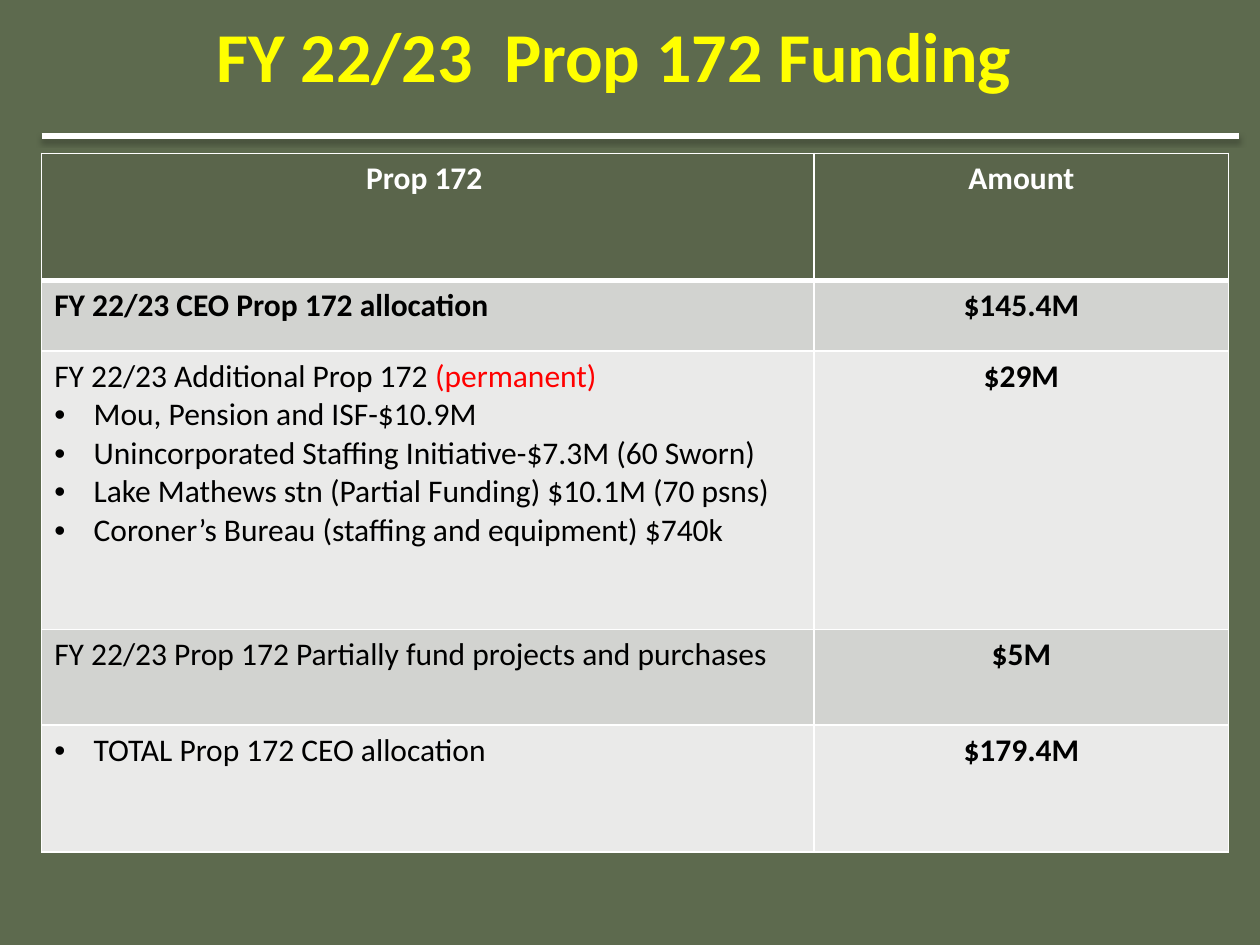
from lxml import etree
from pptx import Presentation
from pptx.dml.color import RGBColor
from pptx.enum import shapes, text
from pptx.oxml import ns
from pptx.util import Pt

WHITE, BLACK, RED, YELLOW = "FFFFFF", "000000", "FF0000", "FFFF00"
BACKGROUND, HEADER = "5D6A4E", "5A654B"
BANDS = ["D2D3D0", "EAEAE9"]

# Content: each cell is a list of paragraphs, each paragraph keyword arguments
TITLE = "FY 22/23  Prop 172 Funding "
ROWS = [
    ([dict(content="Prop 172 ", bold=True, center=True)], "Amount"),
    ([dict(content="FY 22/23 CEO Prop 172 allocation", bold=True)], "$145.4M"),
    ([dict(content="FY 22/23 Additional Prop 172 ", accent="(permanent)"),
      dict(content="Mou, Pension and ISF-$10.9M", bullet=True),
      dict(content="Unincorporated Staffing Initiative-$7.3M (60 Sworn)", bullet=True),
      dict(content="Lake Mathews stn (Partial Funding) $10.1M (70 psns)", bullet=True),
      dict(content="Coroner’s Bureau (staffing and equipment) $740k", bullet=True)],
     "$29M"),
    ([dict(content="FY 22/23 Prop 172 Partially fund projects and purchases")], "$5M"),
    ([dict(content="TOTAL Prop 172 CEO allocation", bullet=True)], "$179.4M"),
]
ROW_HEIGHTS = [72.7, 40.3, 159.1, 54.7, 72.7]
COL_WIDTHS = [441.4, 236.9]
LEFT = 23.8
INDENT = 22.5


def rgb(value):
    return RGBColor.from_string(value)


def sub(parent, tag, **attrs):
    return etree.SubElement(parent, ns.qn(tag), {k: str(v) for k, v in attrs.items()})


def write(p, content, size=18, color=BLACK, bold=False, center=False,
          bullet=False, accent=""):
    p.alignment = text.PP_ALIGN.CENTER if center else text.PP_ALIGN.LEFT
    if bullet:
        pPr = p._p.get_or_add_pPr()
        pPr.set("marL", str(Pt(INDENT)))
        pPr.set("indent", str(-Pt(INDENT)))
        sub(pPr, "a:buFont", typeface="Arial")
        sub(pPr, "a:buChar", char="•")
    for words, tint in ((content, color), (accent, RED)):
        if words:
            r = p.add_run()
            r.text = words
            r.font.name, r.font.size, r.font.bold = "Calibri", Pt(size), bold
            r.font.color.rgb = rgb(tint)


def add_borders(cell, **widths):
    tcPr = cell._tc.get_or_add_tcPr()
    for side in "LRTB":
        ln = sub(tcPr, f"a:ln{side}", w=Pt(widths.get(side, 1)))
        sub(sub(ln, "a:solidFill"), "a:srgbClr", val=WHITE)


prs = Presentation()
prs.slide_width, prs.slide_height = Pt(720), Pt(540)
s = prs.slides.add_slide(prs.slide_layouts[6])
s.background.fill.solid()
s.background.fill.fore_color.rgb = rgb(BACKGROUND)

# Rule under the title, with a soft shadow
rule = s.shapes.add_connector(shapes.MSO_CONNECTOR.STRAIGHT,
                              Pt(LEFT), Pt(77.8), Pt(707.8), Pt(77.8))
rule.line.color.rgb = rgb(WHITE)
rule.line.width = Pt(3)
shadow = sub(sub(rule._element.spPr, "a:effectLst"), "a:outerShdw",
             blurRad=Pt(3.1), dist=Pt(1.8), dir=90 * 60000, rotWithShape=0)
sub(sub(shadow, "a:srgbClr", val=BLACK), "a:alpha", val=35000)

# Title
tf = s.shapes.add_textbox(Pt(LEFT), Pt(3.6), Pt(663), Pt(55.4)).text_frame
tf.word_wrap = True
tf.auto_size = text.MSO_AUTO_SIZE.SHAPE_TO_FIT_TEXT
write(tf.paragraphs[0], TITLE, size=40, color=YELLOW, bold=True, center=True)

# Funding table
table = s.shapes.add_table(len(ROWS), len(COL_WIDTHS), Pt(LEFT), Pt(87.6),
                           Pt(sum(COL_WIDTHS)), Pt(sum(ROW_HEIGHTS))).table
for column, width in zip(table.columns, COL_WIDTHS):
    column.width = Pt(width)
for i, (paragraphs, amount) in enumerate(ROWS):
    table.rows[i].height = Pt(ROW_HEIGHTS[i])
    amount_cell = [dict(content=amount, bold=True, center=True)]
    for j, items in enumerate((paragraphs, amount_cell)):
        cell = table.cell(i, j)
        add_borders(cell, T=3 if i == 1 else 1, B=3 if i == 0 else 1)
        cell.fill.solid()
        cell.fill.fore_color.rgb = rgb(BANDS[(i - 1) % 2] if i else HEADER)
        tf = cell.text_frame
        for k, item in enumerate(items):
            p = tf.add_paragraph() if k else tf.paragraphs[0]
            write(p, color=BLACK if i else WHITE, **item)

prs.save("out.pptx")
